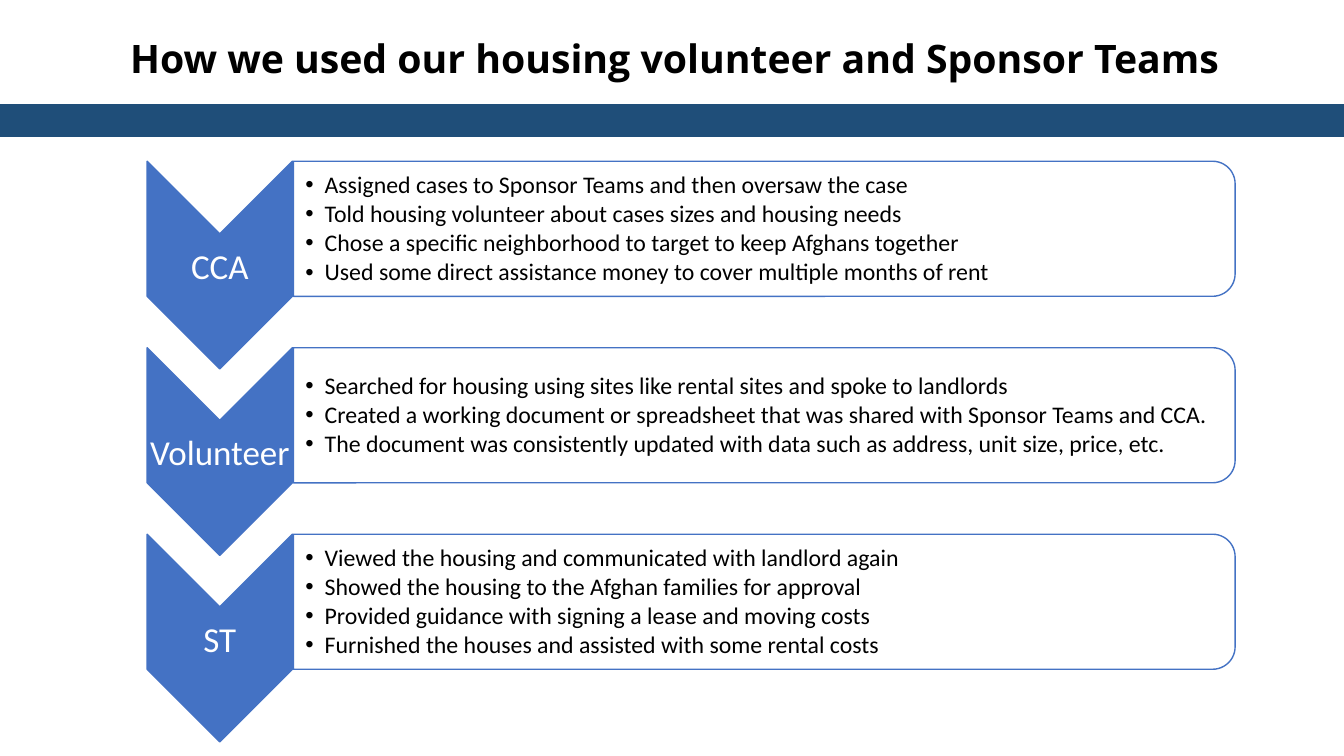
from dataclasses import dataclass

from lxml import etree
from pptx import Presentation
from pptx.dml.color import RGBColor
from pptx.enum.shapes import MSO_SHAPE
from pptx.enum.text import MSO_ANCHOR, PP_ALIGN
from pptx.oxml.ns import qn
from pptx.util import Inches, Pt

RECT = MSO_SHAPE.RECTANGLE
CHEVRON = MSO_SHAPE.CHEVRON
ROUND_TOP = MSO_SHAPE.ROUND_2_SAME_RECTANGLE
TOP, MIDDLE = MSO_ANCHOR.TOP, MSO_ANCHOR.MIDDLE
CENTER = PP_ALIGN.CENTER

NAVY, BLUE, WHITE, BLACK = "1F4E79", "4472C4", "FFFFFF", "000000"
ROW_TOP, ROW_PITCH = 1.6, 1.85


@dataclass
class Role:
    name: str
    tasks: list[str]


ROLES = [
    Role("CCA", [
        "Assigned cases to Sponsor Teams and then oversaw the case",
        "Told housing volunteer about cases sizes and housing needs",
        "Chose a specific neighborhood to target to keep Afghans together",
        "Used some direct assistance money to cover multiple months of rent",
    ]),
    Role("Volunteer", [
        "Searched for housing using sites like rental sites and spoke to landlords",
        "Created a working document or spreadsheet that was shared with Sponsor Teams and CCA.",
        "The document was consistently updated with data such as address, unit size, price, etc.",
    ]),
    Role("ST", [
        "Viewed the housing and communicated with landlord again",
        "Showed the housing to the Afghan families for approval",
        "Provided guidance with signing a lease and moving costs",
        "Furnished the houses and assisted with some rental costs",
    ]),
]


def rgb(color: str) -> RGBColor:
    return RGBColor.from_string(color)


def add_box(s, kind, x: float, y: float, w: float, h: float,
            fill: str, line: str, rotation: float = 0):
    sp = s.shapes.add_shape(kind, Inches(x), Inches(y), Inches(w), Inches(h))
    sp.rotation = rotation
    sp.shadow.inherit = False
    sp.fill.solid()
    sp.fill.fore_color.rgb = rgb(fill)
    sp.line.color.rgb = rgb(line)
    sp.line.width = Pt(1)
    return sp


def set_opacity(sp, percent: int) -> None:
    color = sp.fill._xPr.find(qn("a:solidFill"))[0]
    etree.SubElement(color, qn("a:alpha"), val=str(percent * 1000))


def add_text(s, x: float, y: float, w: float, h: float, lines: list[str],
             size: float, color: str, font: str = "Calibri", bold: bool = False,
             anchor=MIDDLE, inset: float = 0.01, left: float = 0.01,
             bullets: bool = False) -> None:
    tf = s.shapes.add_textbox(Inches(x), Inches(y), Inches(w), Inches(h)).text_frame
    tf.word_wrap = True
    tf.vertical_anchor = anchor
    tf.margin_left = Inches(left)
    tf.margin_right = tf.margin_top = tf.margin_bottom = Inches(inset)
    for i, text in enumerate(lines):
        p = tf.paragraphs[0] if i == 0 else tf.add_paragraph()
        if bullets:
            p.line_spacing = 0.9
            p.space_after = Pt(2.5)
            add_bullet(p)
        else:
            p.alignment = CENTER
        r = p.add_run()
        r.text = text
        r.font.name = font
        r.font.size = Pt(size)
        r.font.bold = bold
        r.font.color.rgb = rgb(color)


def add_bullet(p) -> None:
    pPr = p._p.get_or_add_pPr()
    pPr.set("marL", str(Inches(0.19)))
    pPr.set("indent", str(-Inches(0.19)))
    etree.SubElement(pPr, qn("a:buFont"), typeface="Arial")
    etree.SubElement(pPr, qn("a:buChar"), char="•")


def add_role(s, role: Role, y: float) -> None:
    # Down-pointing chevron with the role name
    add_box(s, CHEVRON, 1.15, y + 0.31, 2.06, 1.44, BLUE, BLUE, 90)
    add_text(s, 1.46, y + 0.72, 1.44, 0.62, [role.name], 25, WHITE)
    # Panel rounded on its right side, with the tasks
    panel = add_box(s, ROUND_TOP, 6.91, y - 4, 1.34, 9.34, WHITE, BLUE, 90)
    set_opacity(panel, 90)
    add_text(s, 2.9, y + 0.07, 9.28, 1.21, role.tasks, 17, BLACK,
             left=0.13, bullets=True)


def main() -> None:
    prs = Presentation()
    prs.slide_width, prs.slide_height = Inches(13.33), Inches(7.5)
    s = prs.slides.add_slide(prs.slide_layouts[6])

    # Title and band
    add_text(s, 0.55, 0.29, 12.23, 1.31,
             ["How we used our housing volunteer and Sponsor Teams"],
             28, BLACK, "Open Sans", True, TOP, 0.05, 0.1)
    add_box(s, RECT, 0, 1.04, 13.33, 0.31, NAVY, NAVY)

    # Roles
    for i, role in enumerate(ROLES):
        add_role(s, role, ROW_TOP + i * ROW_PITCH)

    prs.save("out.pptx")


if __name__ == "__main__":
    main()
